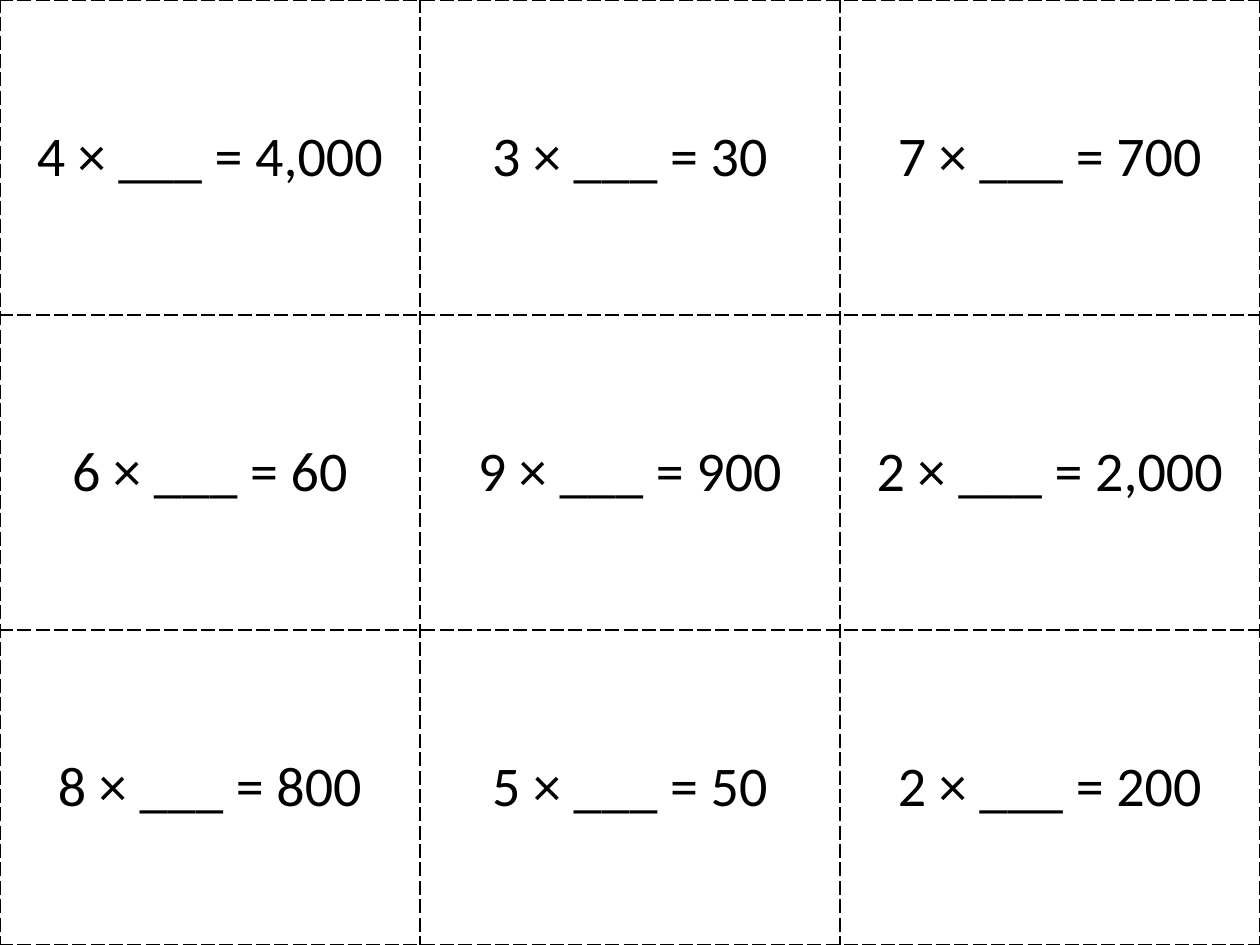
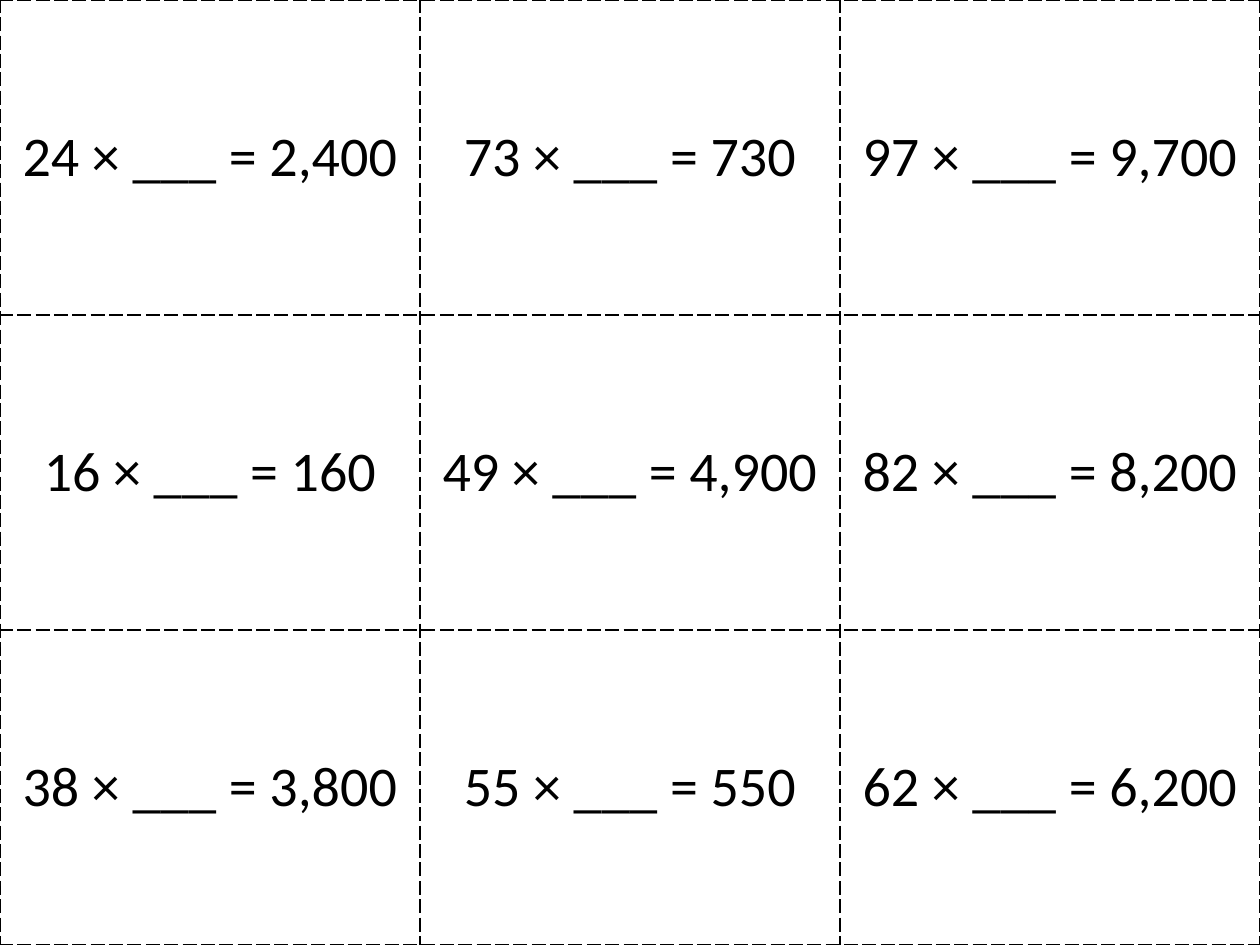
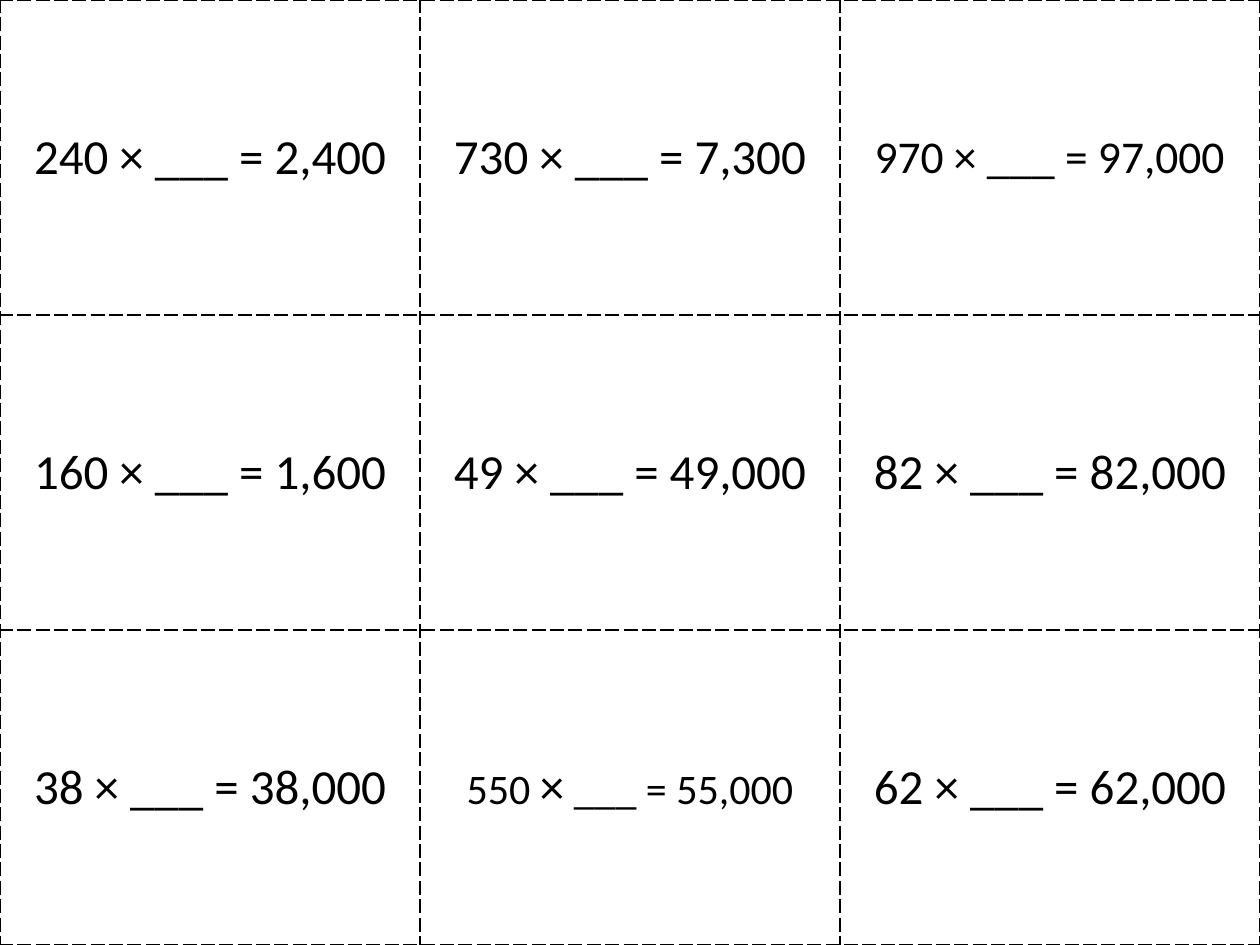
from lxml import etree
from pptx import Presentation
from pptx import util as u
from pptx.dml.color import RGBColor
from pptx.enum import text
from pptx.oxml import ns

COLORS = {"ink": "000000", "page": "FFFFFF"}
FONT = "Calibri"
WIDTH, HEIGHT = 10, 7.5
GRID = 3

# Each card holds a factor, a product and, where it differs, its text size.
DECKS = [
    (32, [(4, 4000), (3, 30), (7, 700),
          (6, 60), (9, 900), (2, 2000),
          (8, 800), (5, 50), (2, 200)]),
    (32, [(24, 2400), (73, 730), (97, 9700),
          (16, 160), (49, 4900), (82, 8200),
          (38, 3800), (55, 550), (62, 6200)]),
    (28, [(240, 2400), (730, 7300), (970, 97000, 26),
          (160, 1600), (49, 49000), (82, 82000),
          (38, 38000), (550, 55000, 24, 28), (62, 62000)]),
]


def write(para, words, size, color="ink", font=FONT):
    run = para.add_run()
    run.text = words
    run.font.size = u.Pt(size)
    run.font.name = font
    run.font.color.rgb = RGBColor.from_string(COLORS[color])


def border(cell, color="ink", width=1.5, dash="lgDash"):
    """Draw a dashed cut line on all four sides of a cell."""
    props = cell._tc.get_or_add_tcPr()
    for place, side in enumerate(("lnL", "lnR", "lnT", "lnB")):
        line = etree.Element(ns.qn(f"a:{side}"), w=str(u.Pt(width)))
        fill = etree.SubElement(line, ns.qn("a:solidFill"))
        etree.SubElement(fill, ns.qn("a:srgbClr"), val=COLORS[color])
        etree.SubElement(line, ns.qn("a:prstDash"), val=dash)
        props.insert(place, line)


class Cards:
    def __init__(self):
        self.deck = Presentation()
        self.deck.slide_width = u.Inches(WIDTH)
        self.deck.slide_height = u.Inches(HEIGHT)
        self.slide = None

    def page(self):
        self.slide = self.deck.slides.add_slide(self.deck.slide_layouts[6])
        fill = self.slide.background.fill
        fill.solid()
        fill.fore_color.rgb = RGBColor.from_string(COLORS["page"])

    def sheet(self, size, cards):
        """Fill the slide with a square grid of cards."""
        table = self.slide.shapes.add_table(
            GRID, GRID, 0, 0, u.Inches(WIDTH), u.Inches(HEIGHT)).table
        table.first_row = table.horz_banding = False
        for row in table.rows:
            row.height = u.Inches(HEIGHT / GRID)
        for cell, card in zip(table.iter_cells(), cards):
            self.card(cell, size, *card)

    def card(self, cell, base, factor, product, size=None, sign=None):
        """Write one sum; sign is the size of the times sign."""
        size = size or base
        cell.fill.background()
        border(cell)
        cell.vertical_anchor = text.MSO_ANCHOR.MIDDLE
        para = cell.text_frame.paragraphs[0]
        para.alignment = text.PP_ALIGN.CENTER
        head, tail = f"{factor} ", f" ___ = {product:,}"
        if sign:
            write(para, head, size)
            write(para, "×", sign)
            write(para, tail, size)
        else:
            write(para, f"{head}×{tail}", size)


def main():
    cards = Cards()
    for size, sums in DECKS:
        cards.page()
        cards.sheet(size, sums)
    cards.deck.save("out.pptx")


if __name__ == "__main__":
    main()
